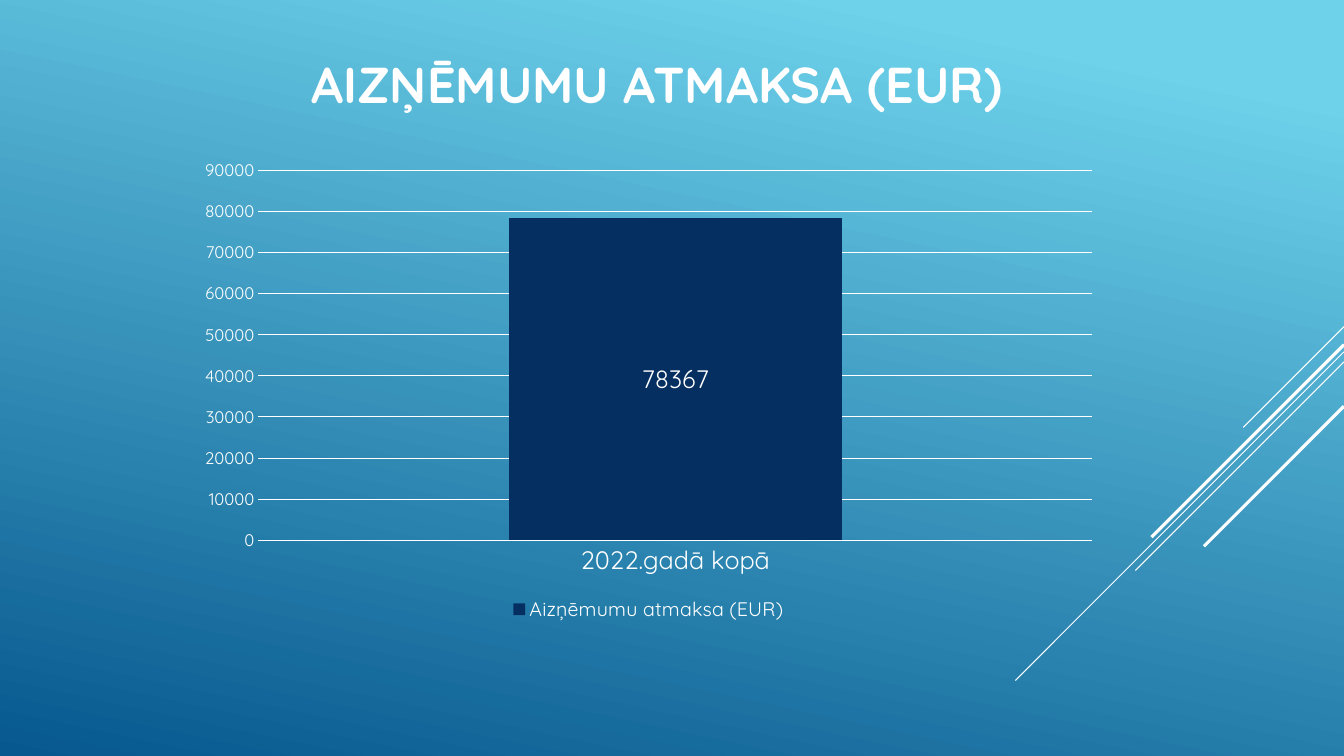
from lxml.etree import SubElement
from pptx import Presentation
from pptx.chart.data import CategoryChartData
from pptx.dml.color import RGBColor
from pptx.enum.chart import XL_CHART_TYPE, XL_LABEL_POSITION, XL_LEGEND_POSITION, XL_TICK_MARK
from pptx.enum.shapes import MSO_CONNECTOR
from pptx.enum.text import MSO_ANCHOR, PP_ALIGN
from pptx.oxml.ns import qn
from pptx.util import Pt

COLORS = {"white": "FFFFFF", "navy": "052F61", "sky": "6ED2EB", "ocean": "06588E"}
FONT = "Quicksand"
WIDTH, HEIGHT = 960, 540


def rgb(name):
    return RGBColor.from_string(COLORS[name])


def style_font(font, size, color="white", bold=False):
    font.name, font.size, font.bold = FONT, Pt(size), bold
    font.color.rgb = rgb(color)


def add_text(p, text, align=PP_ALIGN.CENTER, **style):
    p.alignment = align
    r = p.add_run()
    r.text = text
    style_font(r.font, **style)


def style_line(line, width=0.75, color="white"):
    line.color.rgb = rgb(color)
    line.width = Pt(width)


class SlideBuilder:
    def __init__(self, prs):
        self.s = prs.slides.add_slide(prs.slide_layouts[6])

    def background(self, stops, angle):
        fill = self.s.background.fill
        fill.gradient()
        fill.gradient_angle = 360 - angle
        for stop, (position, color) in zip(fill.gradient_stops, stops):
            stop.position = position
            stop.color.rgb = rgb(color)

    def line(self, x1, y1, x2, y2, width):
        c = self.s.shapes.add_connector(
            MSO_CONNECTOR.STRAIGHT, Pt(x1), Pt(y1), Pt(x2), Pt(y2))
        style_line(c.line, width)
        SubElement(c._element.spPr, qn("a:effectLst"))

    def text(self, x, y, w, h, text, **style):
        tf = self.s.shapes.add_textbox(Pt(x), Pt(y), Pt(w), Pt(h)).text_frame
        tf.word_wrap = True
        tf.vertical_anchor = MSO_ANCHOR.MIDDLE
        add_text(tf.paragraphs[0], text, **style)

    def column_chart(self, x, y, w, h, categories, name, values):
        data = CategoryChartData()
        data.categories = categories
        data.add_series(name, values)
        chart = self.s.shapes.add_chart(
            XL_CHART_TYPE.COLUMN_STACKED, Pt(x), Pt(y), Pt(w), Pt(h), data).chart
        style_font(chart.font, 10)
        chart.has_title = False

        # Legend
        chart.has_legend = True
        chart.legend.position = XL_LEGEND_POSITION.BOTTOM
        chart.legend.include_in_layout = False
        style_font(chart.legend.font, 14)

        # Axes
        for axis, size in ((chart.category_axis, 18), (chart.value_axis, 12)):
            axis.major_tick_mark = axis.minor_tick_mark = XL_TICK_MARK.NONE
            style_font(axis.tick_labels.font, size)
        style_line(chart.category_axis.format.line)
        chart.value_axis.format.line.fill.background()
        chart.value_axis.minimum_scale = 0
        style_line(chart.value_axis.major_gridlines.format.line)

        # Column and its label
        plot = chart.plots[0]
        plot.vary_by_categories = False
        plot.gap_width, plot.overlap = 150, 100
        series = plot.series[0]
        series.format.fill.solid()
        series.format.fill.fore_color.rgb = rgb("navy")
        labels = series.data_labels
        labels.show_value = True
        labels.position = XL_LABEL_POSITION.CENTER
        style_font(labels.font, 18)


def main():
    prs = Presentation()
    prs.slide_width, prs.slide_height = Pt(WIDTH), Pt(HEIGHT)
    slide = SlideBuilder(prs)
    slide.background([(0.1, "sky"), (1, "ocean")], angle=102)

    # Diagonal lines at 45 degrees from the right edge: top, run, width
    for top, run, width in ((233.3, 72, 0.75), (251.3, 234.7, 0.75), (258.5, 149, 0.75),
                            (246.2, 137.5, 2.25), (290.2, 100, 2.25)):
        slide.line(WIDTH, top, WIDTH - run, top + run, width)

    # Title
    slide.text(133.2, 0, 671.8, 118.8, "AIZŅĒMUMU ATMAKSA (EUR)", size=36, bold=True)

    # Loan repayment chart
    slide.column_chart(133.2, 107.3, 660.2, 339.8, ["2022.gadā kopā"],
                       "Aizņēmumu atmaksa (EUR)", [78367])
    prs.save("out.pptx")


if __name__ == "__main__":
    main()
